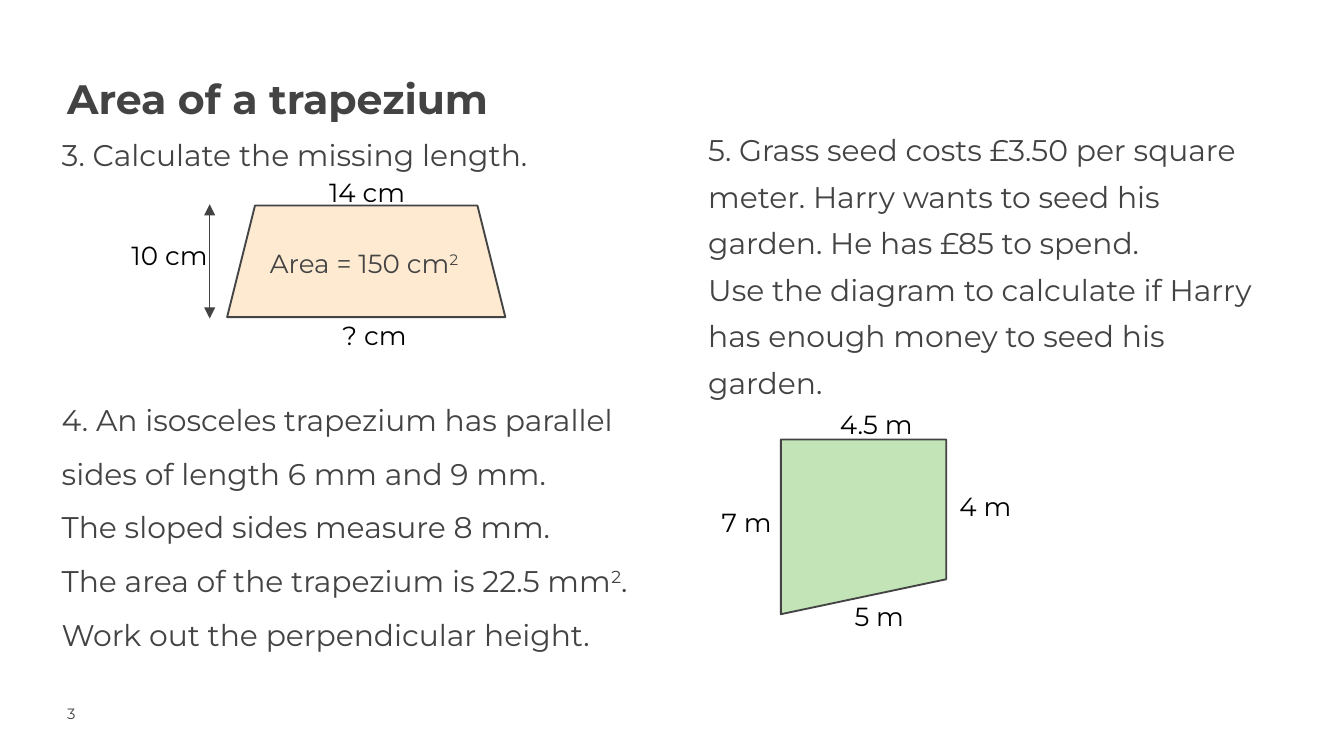
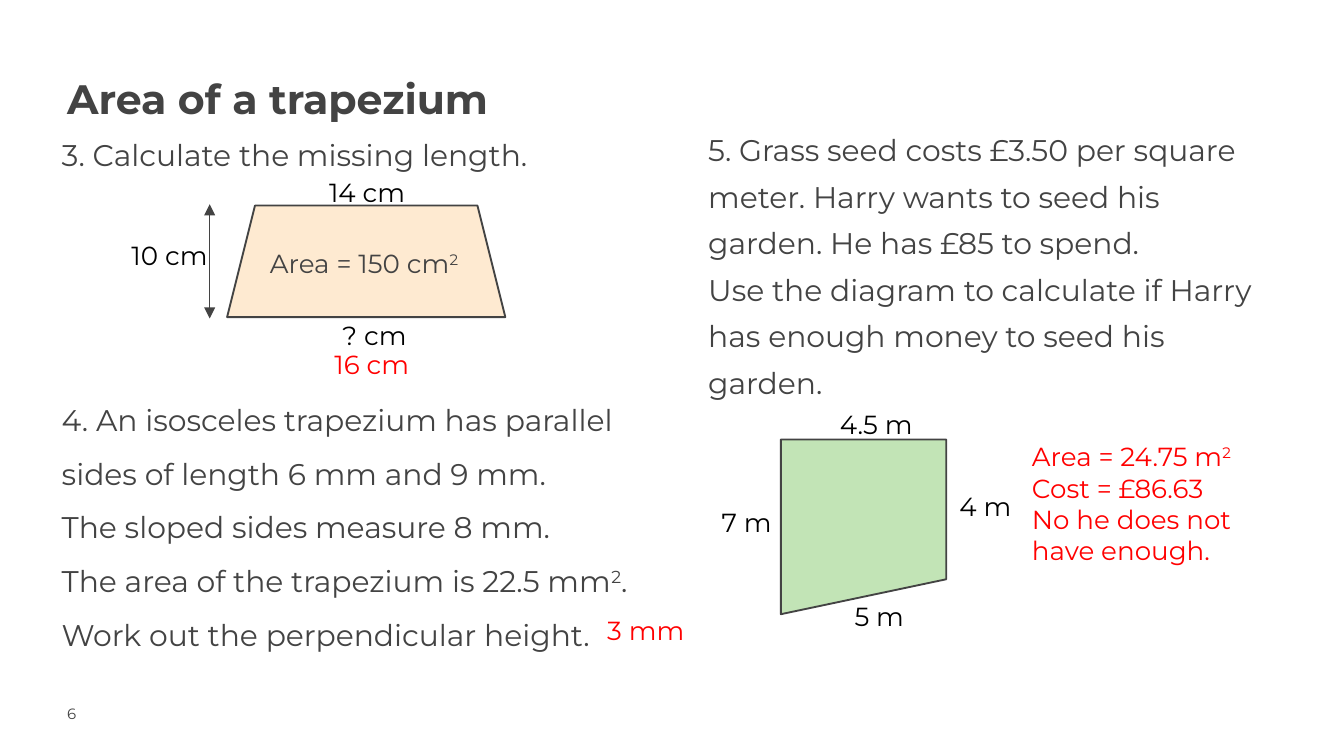
from lxml.etree import SubElement
from pptx import Presentation
from pptx.dml.color import RGBColor
from pptx.enum.shapes import MSO_CONNECTOR as Link, MSO_SHAPE as Form
from pptx.oxml.ns import qn
from pptx.util import Inches, Pt

COLS, ROWS = 100, 56.25  # square cells of a tenth of an inch
INK, BLACK, RED = "434343", "000000", "FF0000"
PEACH, GREEN = "FEEAD1", "C2E4B6"
FACE = "Montserrat"

STYLES = {
    "title": {"size": Pt(22), "bold": True},
    "body": {"size": Pt(16)},
    "label": {"size": Pt(14)},
    "page": {"size": Pt(8)},
}


def cell(n):
    return Inches(n / 10)


def hue(code):
    return RGBColor.from_string(code)


class Deck:
    """Holds the style, the current slide and the group being filled."""

    def __init__(self):
        self.prs = Presentation()
        self.prs.slide_width, self.prs.slide_height = cell(COLS), cell(ROWS)

    def start(self):
        blank = self.prs.slide_layouts[6]
        self.slide = self.prs.slides.add_slide(blank)
        self.home = self.slide.shapes

    def group(self):
        """Send the next elements into a new group."""
        self.home = self.slide.shapes.add_group_shape().shapes

    def ungroup(self):
        self.home = self.slide.shapes

    def text(self, box, lines, style="label", color=BLACK, pad=(0, 0)):
        """Write lines; a part between two ^ marks is superscript.

        A line is a string or a (string, paragraph format) pair."""
        frame = self.home.add_textbox(*map(cell, box)).text_frame
        frame.word_wrap = True
        across, down = map(cell, pad)
        sides = {"margin_left": across, "margin_right": across,
                 "margin_top": down, "margin_bottom": down}
        for name, value in sides.items():
            setattr(frame, name, value)
        for i, line in enumerate(lines):
            words, form = line if isinstance(line, tuple) else (line, {})
            para = frame.paragraphs[0] if i == 0 else frame.add_paragraph()
            for name, value in form.items():
                setattr(para, name, value)
            for j, part in enumerate(words.split("^")):
                run = para.add_run()
                run.text = part
                for name, value in {"name": FACE, **STYLES[style]}.items():
                    setattr(run.font, name, value)
                run.font.color.rgb = hue(color)
                if j % 2:
                    run._r.get_or_add_rPr().set("baseline", "30000")

    def label(self, box, *lines, color=BLACK):
        self.text(box, lines, color=color, pad=(1, 0.5))

    def shape(self, form, box, fill, turn=0):
        item = self.home.add_shape(form, *map(cell, box))
        item.shadow.inherit = False
        item.rotation = turn
        item.fill.solid()
        item.fill.fore_color.rgb = hue(fill)
        item.line.color.rgb = hue(INK)
        item.line.width = Pt(1)

    def arrow(self, *ends):
        """Draw a line with a head at both ends."""
        item = self.home.add_connector(Link.STRAIGHT, *map(cell, ends))
        item.line.color.rgb = hue(INK)
        item.line.width = Pt(0.75)
        line = item.line._get_or_add_ln()
        for tag in ("a:headEnd", "a:tailEnd"):
            SubElement(line, qn(tag), type="triangle")
        SubElement(item._element.spPr, qn("a:effectLst"))


def tasks(deck, page):
    """Write the title, the three questions and the page number."""
    wide, loose = {"line_spacing": 1.3}, {"line_spacing": 1.5}
    deck.text((5, 4.9, 73.7, 5.2),
              [("Area of a trapezium", {"line_spacing": 1.15})], "title", INK)
    deck.text((4.6, 9.4, 42.6, 44.3), [
        ("3. Calculate the missing length.", wide),
        ("4. An isosceles trapezium has parallel sides of length "
         "6 mm and 9 mm.", {**loose, "space_before": Pt(113)}),
        ("The sloped sides measure 8 mm.", loose),
        ("The area of the trapezium is 22.5 mm^2^.", loose),
        ("Work out the perpendicular height.", loose),
    ], "body", INK)
    deck.text((52.7, 9, 41.7, 45.4), [
        ("5. Grass seed costs £3.50 per square meter. Harry wants to seed "
         "his garden. He has £85 to spend.", wide),
        ("Use the diagram to calculate if Harry has enough money to seed "
         "his garden.", wide),
    ], "body", INK)
    deck.text((5, 52.4, 7.9, 2), [page], "page", INK)


def figures(deck):
    """Draw the trapezium and the garden with their lengths."""
    deck.group()
    deck.shape(Form.TRAPEZOID, (16.9, 15.3, 20.7, 8.3), PEACH)
    deck.label((19.1, 17.9, 16.7, 3.4), "Area = 150 cm^2", color=INK)
    deck.arrow(15.6, 15.2, 15.6, 23.7)
    for x, y, words in ((23.5, 12.6, "14 cm"), (8.8, 17.3, "10 cm"),
                        (24.5, 23.3, "? cm")):
        deck.label((x, y, 9.4, 3.2), words)

    deck.group()
    deck.shape(Form.FLOWCHART_MANUAL_INPUT, (58.1, 32.7, 12.3, 13), GREEN, 180)
    for x, y, words in ((52.7, 37.2, "7 m"), (62.6, 44.2, "5 m"),
                        (61.5, 29.9, "4.5 m"), (70.4, 36, "4 m")):
        deck.label((x, y, 10.1, 2.9), words)
    deck.ungroup()


def answers(deck):
    deck.label((23.9, 25.4, 10, 3.4), "16 cm", color=RED)
    deck.label((44.2, 45.2, 10, 3.4), "3 mm", color=RED)
    deck.label((75.8, 32.3, 21, 10.4), "Area = 24.75 m^2", "Cost = £86.63",
               "No he does not have enough.", color=RED)


def main():
    deck = Deck()
    for page, solved in (("3", False), ("6", True)):
        deck.start()
        tasks(deck, page)
        figures(deck)
        if solved:
            answers(deck)
    deck.prs.save("out.pptx")


if __name__ == "__main__":
    main()
